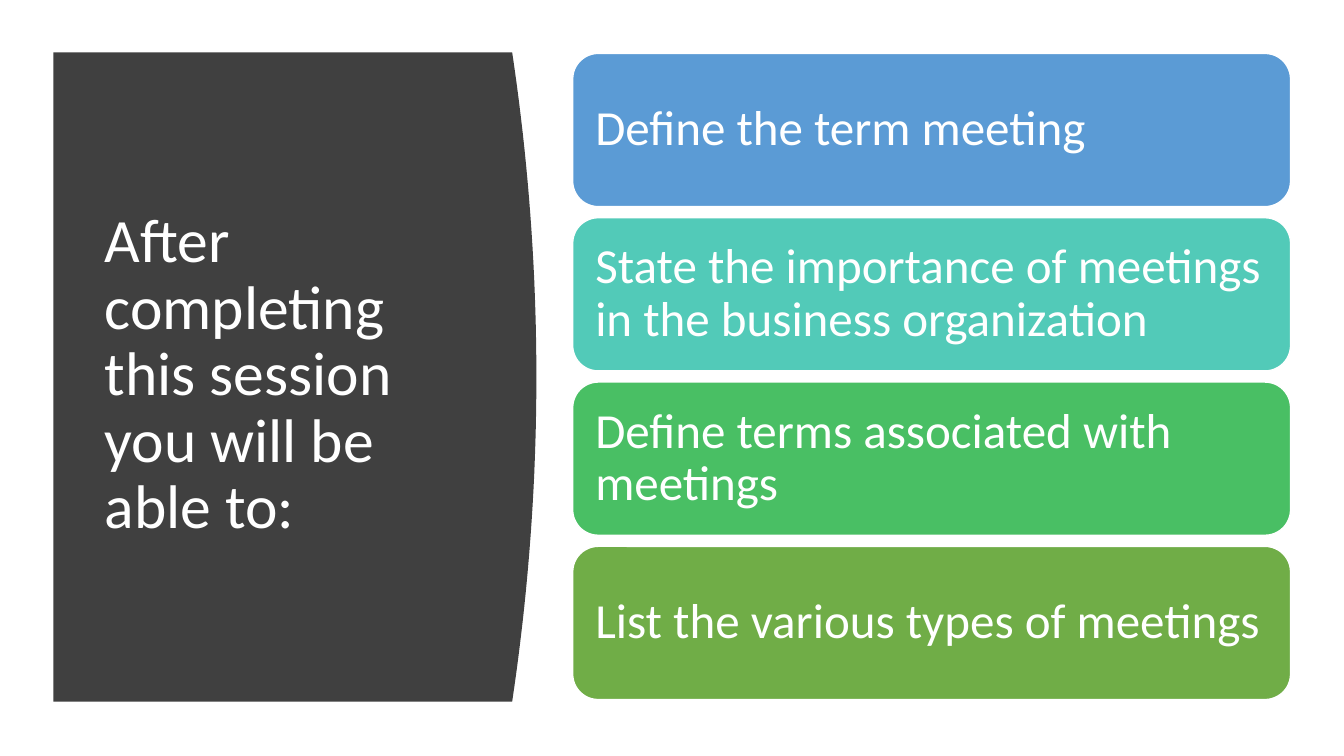
from dataclasses import dataclass

from pptx import Presentation
from pptx import util as u
from pptx.dml.color import RGBColor
from pptx.enum import shapes, text
from pptx.shapes.autoshape import Shape
from pptx.slide import Slide

WHITE = "FFFFFF"
PANEL_LEFT, PANEL_TOP, PANEL_BOTTOM = 0.53, 0.52, 6.96
PANEL_CORNER, PANEL_BULGE, CURVE_STEPS = 5.08, 0.24, 40
CARD_LEFT, CARD_TOP, CARD_WIDTH, CARD_HEIGHT, CARD_PITCH = 5.68, 0.53, 7.12, 1.52, 1.63


@dataclass
class Objective:
    label: str
    color: str


OBJECTIVES = [
    Objective("Define the term meeting", "5B9BD5"),
    Objective("State the importance of meetings in the business organization", "52CAB8"),
    Objective("Define terms associated with meetings", "49BF64"),
    Objective("List the various types of meetings", "70AD47"),
]


def rgb(value: str) -> RGBColor:
    return RGBColor.from_string(value)


def set_text(sp: Shape, label: str, size: float, inset_x: float, inset_y: float) -> None:
    tf = sp.text_frame
    frame_format = {
        "word_wrap": True,
        "vertical_anchor": text.MSO_ANCHOR.MIDDLE,
        "margin_left": u.Inches(inset_x),
        "margin_right": u.Inches(inset_x),
        "margin_top": u.Inches(inset_y),
        "margin_bottom": u.Inches(inset_y),
    }
    for name, value in frame_format.items():
        setattr(tf, name, value)
    p = tf.paragraphs[0]
    p.alignment, p.line_spacing = text.PP_ALIGN.LEFT, 0.9
    r = p.add_run()
    r.text = label
    for name, value in {"name": "Calibri", "size": u.Pt(size)}.items():
        setattr(r.font, name, value)
    r.font.color.rgb = rgb(WHITE)


def fill_shape(sp: Shape, color: str) -> None:
    sp.shadow.inherit = False
    sp.fill.solid()
    sp.fill.fore_color.rgb = rgb(color)


def add_panel(s: Slide) -> None:
    """Draw the dark panel, whose right edge is a parabola."""
    half = (PANEL_BOTTOM - PANEL_TOP) / 2
    points = []
    for step in range(CURVE_STEPS + 1):
        t = 2 * step / CURVE_STEPS - 1
        x = PANEL_CORNER + PANEL_BULGE * (1 - t * t)
        points.append((u.Inches(x), u.Inches(PANEL_TOP + half * (1 + t))))
    points.append((u.Inches(PANEL_LEFT), u.Inches(PANEL_BOTTOM)))
    builder = s.shapes.build_freeform(u.Inches(PANEL_LEFT), u.Inches(PANEL_TOP))
    builder.add_line_segments(points, close=True)
    sp = builder.convert_to_shape()
    fill_shape(sp, "404040")
    sp.line.fill.background()


def add_card(s: Slide, objective: Objective, top: float) -> None:
    sp = s.shapes.add_shape(
        shapes.MSO_SHAPE.ROUNDED_RECTANGLE,
        u.Inches(CARD_LEFT), u.Inches(top), u.Inches(CARD_WIDTH), u.Inches(CARD_HEIGHT),
    )
    fill_shape(sp, objective.color)
    sp.line.color.rgb = rgb(WHITE)
    sp.line.width = u.Pt(1)
    set_text(sp, objective.label, 35, 0.15, 0.15)


def main() -> None:
    prs = Presentation()
    prs.slide_width, prs.slide_height = u.Inches(13.33), u.Inches(7.5)
    s = prs.slides.add_slide(prs.slide_layouts[6])
    add_panel(s)
    title = s.shapes.add_textbox(u.Inches(0.94), u.Inches(1.11), u.Inches(3.74), u.Inches(5.24))
    set_text(title, "After completing this session you will be able to:", 44, 0.1, 0.05)
    for i, objective in enumerate(OBJECTIVES):
        add_card(s, objective, CARD_TOP + i * CARD_PITCH)
    prs.save("out.pptx")


if __name__ == "__main__":
    main()
